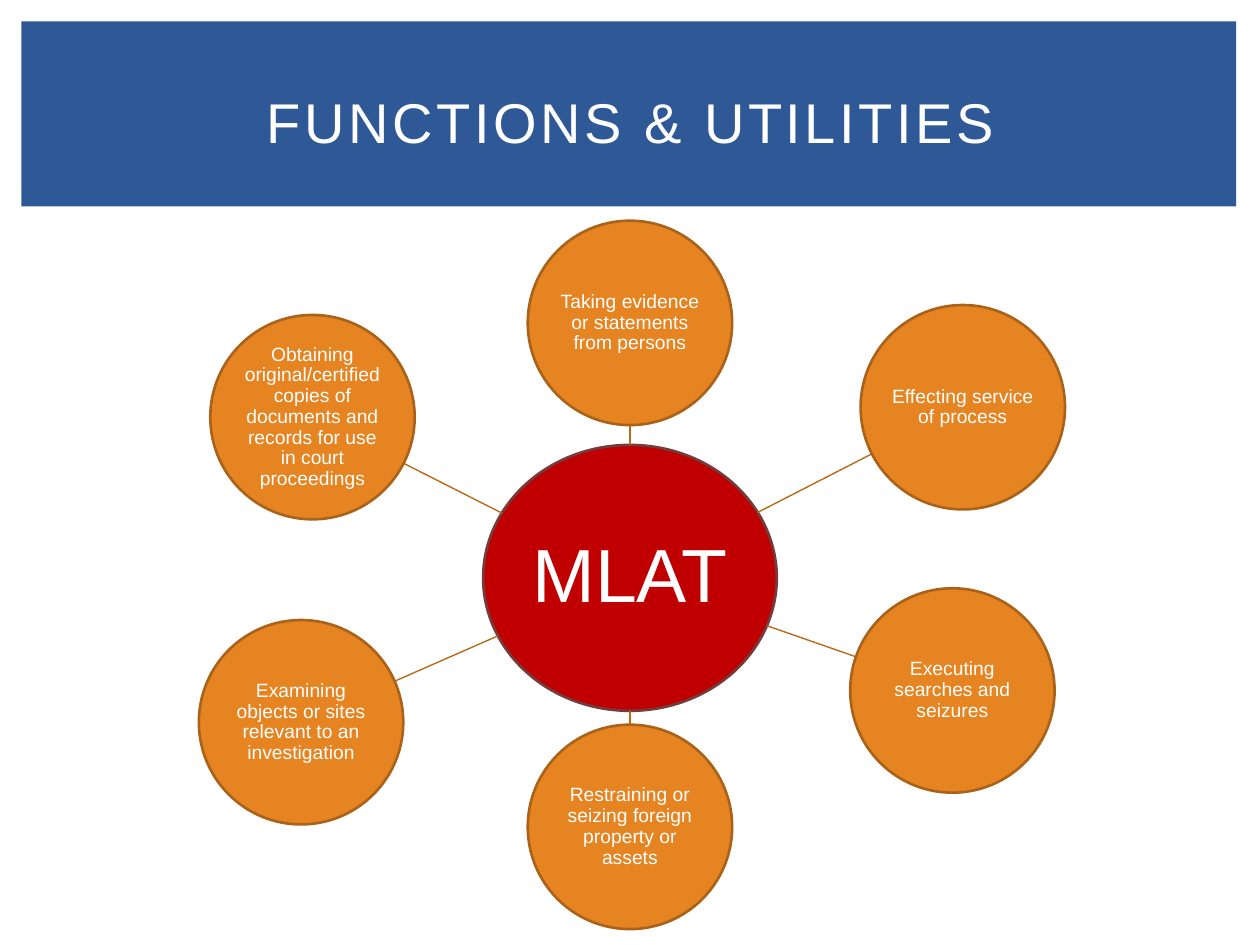
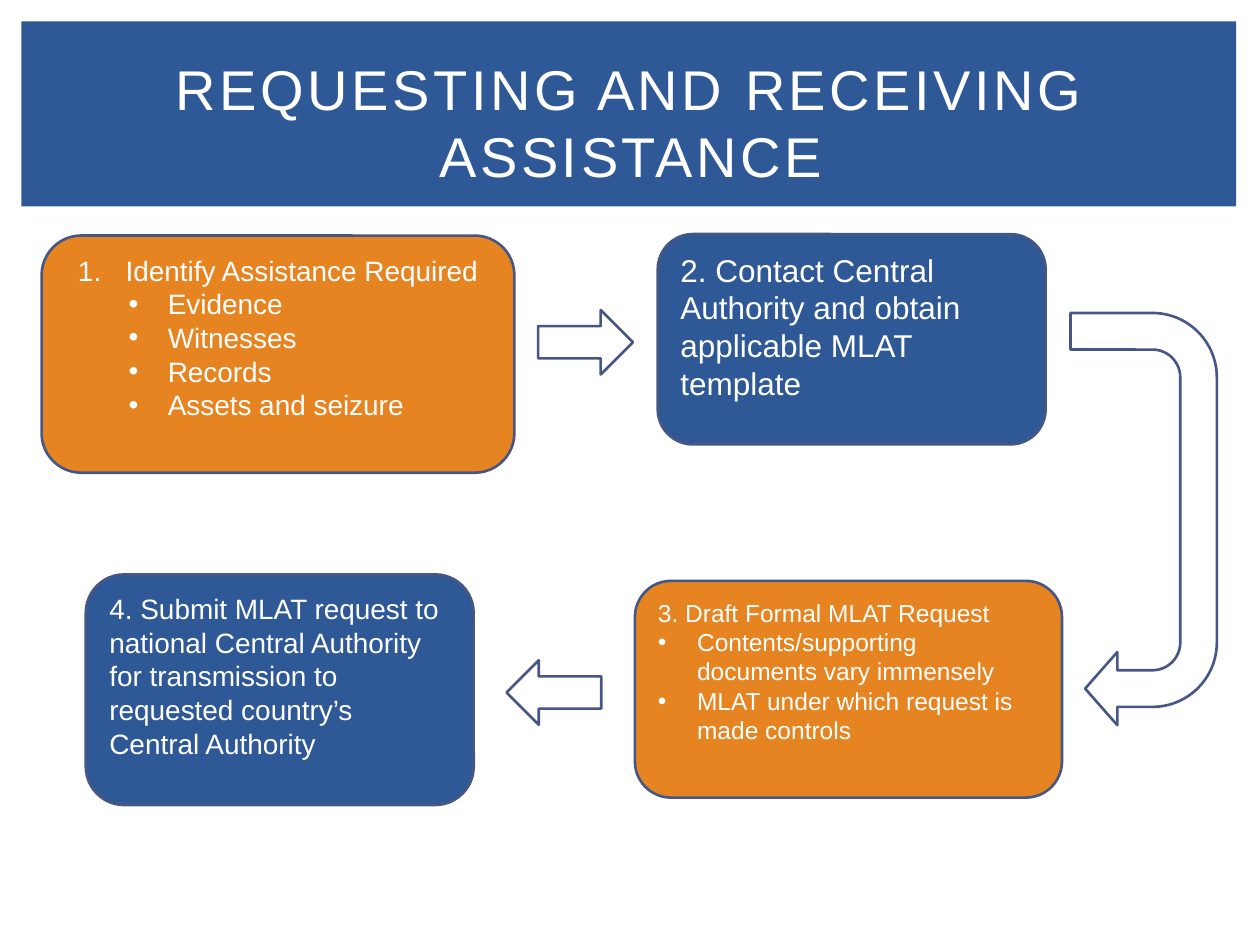
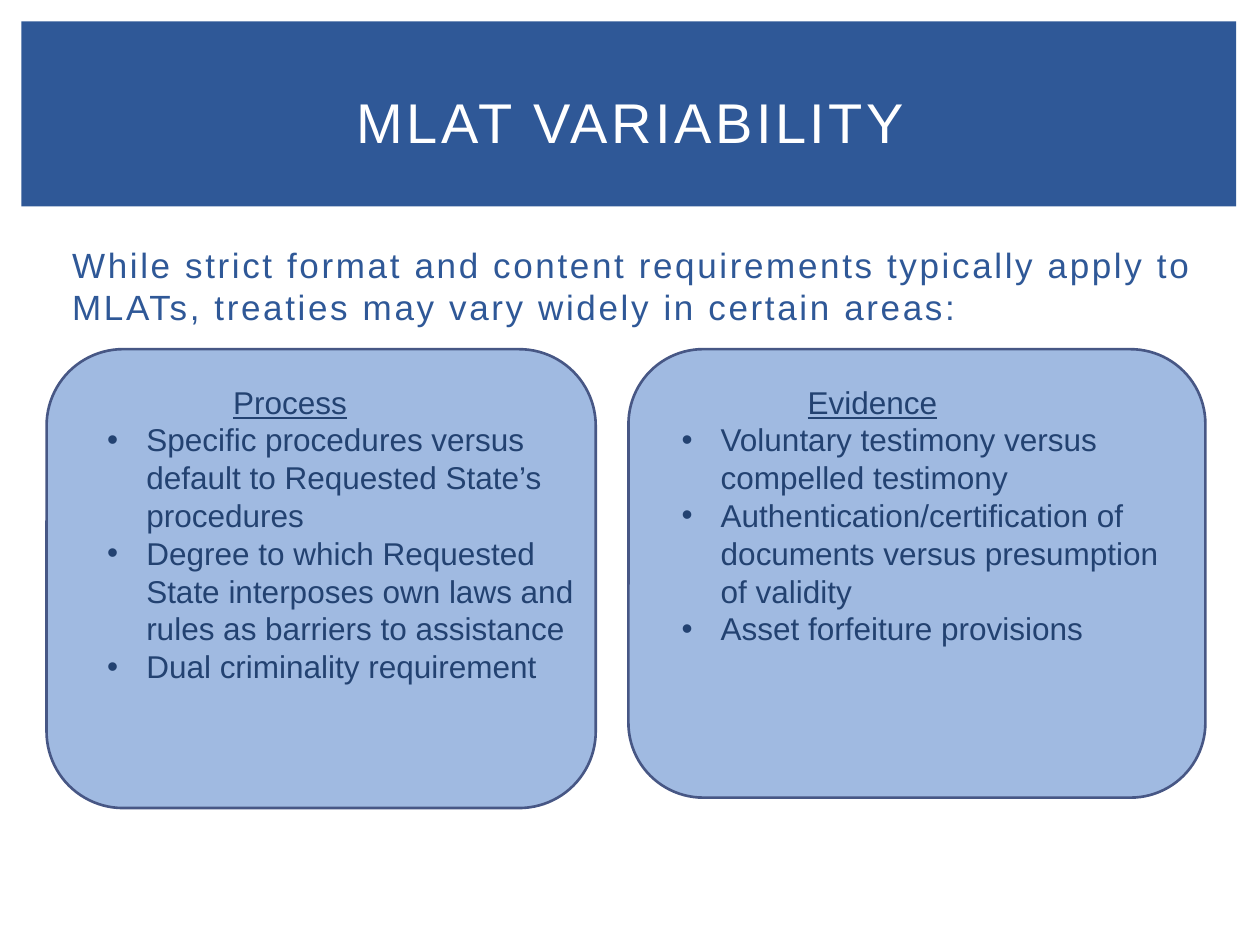
from math import hypot

from lxml.etree import SubElement
from pptx import Presentation
from pptx.dml.color import RGBColor
from pptx.enum.shapes import MSO_CONNECTOR, MSO_SHAPE
from pptx.enum.text import MSO_ANCHOR, MSO_AUTO_SIZE, PP_ALIGN
from pptx.oxml.ns import qn
from pptx.util import Cm, Pt

COLORS = {
    "blue": "2F5897", "orange": "E68422", "red": "C00000", "white": "FFFFFF",
    "pale": "A0BAE1", "navy": "234271", "outline": "475785",
    "hub_line": "733D3D", "spoke_line": "AA6219", "link": "B86A1B",
}
FONT = "Arial"
BAND = (0.43, 0.43, 24.49, 3.73)
TITLE_BOX = (1.07, 0.99, 23.29, 2.92)
TITLE_ONLY, TITLE_AND_BODY = 5, 1

# Paragraph formats: left and hang are in cm, spacing in points
CENTERED = {"alignment": PP_ALIGN.CENTER}
TITLE = {**CENTERED, "size": 32, "color": "white", "spacing": 2}
CIRCLE = {**CENTERED, "line_spacing": 0.9, "color": "white"}
NUMBERED = {**CENTERED, "left": 0.96, "hang": 0.96, "number": True}
BULLET = {"left": 0.79, "hang": 0.79, "bullet": "•"}
SUB_BULLET = {**BULLET, "left": 2.06, "level": 1}


def rgb(name):
    return RGBColor.from_string(COLORS[name])


def lengths(box):
    return [Cm(value) for value in box]


def place(shape, box):
    for name, value in zip(("left", "top", "width", "height"), lengths(box)):
        setattr(shape, name, value)


def within(box, offset_x, offset_y, width, height):
    return box[0] + offset_x, box[1] + offset_y, width, height


def write_paragraph(paragraph, text, style):
    # Indents and bullets come before all other settings
    properties = paragraph._p.get_or_add_pPr()
    left, hang = style.get("left", 0), style.get("hang", 0)
    properties.set("marL", str(Cm(left)))
    properties.set("indent", str(-Cm(hang)))
    if style.get("number"):
        SubElement(properties, qn("a:buFont"), typeface=FONT)
        SubElement(properties, qn("a:buAutoNum"), type="arabicPeriod")
    elif "bullet" in style:
        SubElement(properties, qn("a:buFont"), typeface=FONT)
        SubElement(properties, qn("a:buChar"), char=style["bullet"])
    else:
        SubElement(properties, qn("a:buNone"))
    settings = {"alignment": PP_ALIGN.LEFT, "space_before": Pt(0), "level": 0}
    settings["line_spacing"] = style.get("line_spacing", 1.0)
    settings.update((key, style[key]) for key in ("alignment", "level") if key in style)
    for name, value in settings.items():
        setattr(paragraph, name, value)

    run = paragraph.add_run()
    run.text = text
    font = {"name": FONT, "size": Pt(style["size"]),
            "bold": False, "underline": style.get("underline", False)}
    for name, value in font.items():
        setattr(run.font, name, value)
    run.font.color.rgb = rgb(style["color"])
    if "spacing" in style:
        run._r.get_or_add_rPr().set("spc", str(int(style["spacing"] * 100)))


def write(shape, paragraphs, base, anchor=MSO_ANCHOR.TOP, inset=None):
    frame = shape.text_frame
    settings = {"word_wrap": True, "auto_size": MSO_AUTO_SIZE.NONE,
                "vertical_anchor": anchor}
    if inset is not None:
        for side in ("left", "top", "right", "bottom"):
            settings[f"margin_{side}"] = Cm(inset)
    for name, value in settings.items():
        setattr(frame, name, value)
    for index, (text, style) in enumerate(paragraphs):
        paragraph = frame.add_paragraph() if index else frame.paragraphs[0]
        write_paragraph(paragraph, text, {**base, **style})


def add_shape(slide, kind, box, fill, line=None, rotation=0):
    shape = slide.shapes.add_shape(kind, *lengths(box))
    shape.shadow.inherit = False
    shape.rotation = rotation
    shape.fill.solid()
    shape.fill.fore_color.rgb = rgb(fill)
    if line:
        shape.line.color.rgb = rgb(line)
        shape.line.width = Pt(1.5)
    else:
        shape.line.fill.background()
    return shape


def add_band(presentation, slide):
    """Draw the title band and move it behind everything on the master."""
    band = add_shape(slide, MSO_SHAPE.RECTANGLE, BAND, "blue")
    band.element.nvSpPr.cNvPr.set("id", "20")
    presentation.slide_master.shapes.element.insert(2, band.element)


def add_slide(presentation, layout, title):
    slide = presentation.slides.add_slide(presentation.slide_layouts[layout])
    place(slide.shapes.title, TITLE_BOX)
    write(slide.shapes.title, [(title, {})], TITLE, MSO_ANCHOR.MIDDLE)
    return slide


def add_circle(slide, center, radii, text, size, fill, line, inset):
    (x, y), (radius_x, radius_y) = center, radii
    box = (x - radius_x, y - radius_y, 2 * radius_x, 2 * radius_y)
    circle = add_shape(slide, MSO_SHAPE.OVAL, box, fill, line)
    write(circle, [(text, {"size": size})], CIRCLE, MSO_ANCHOR.MIDDLE, inset)


def add_link(slide, start, end):
    link = slide.shapes.add_connector(MSO_CONNECTOR.STRAIGHT, *lengths(start + end))
    link.line.color.rgb = rgb("link")
    link.line.width = Pt(0.79)
    SubElement(link.element.spPr, qn("a:effectLst"))


def hub_diagram(slide, box, hub, spokes):
    """A hub in the middle of the box, linked to circles around it."""
    left, top, width, height = box
    x, y = left + width / 2, top + height / 2
    hub_x, hub_y, radius = 2.96, 2.68, 2.06
    add_circle(slide, (x, y), (hub_x, hub_y), hub, 43, "red", "hub_line", 0.08)
    for offset_x, offset_y, text in spokes:
        center = (x + offset_x, y + offset_y)
        # The link runs between the two outlines on the line of centres
        near = 1 / hypot(offset_x / hub_x, offset_y / hub_y)
        far = 1 - radius / hypot(offset_x, offset_y)
        start, end = [(x + offset_x * part, y + offset_y * part) for part in (near, far)]
        add_link(slide, start, end)
        add_circle(slide, center, (radius, radius), text, 11, "orange", "spoke_line", 0.03)


def step_flow(slide, box, steps, arrows):
    for offsets, fill, size, paragraphs in steps:
        step = add_shape(slide, MSO_SHAPE.ROUNDED_RECTANGLE, within(box, *offsets),
                         fill, "outline")
        write(step, paragraphs, {"size": size, "color": "white"})
    for kind, offsets, rotation, adjustments in arrows:
        arrow = add_shape(slide, kind, within(box, *offsets), "white", "outline", rotation)
        for index, value in enumerate(adjustments):
            arrow.adjustments[index] = value


def topic_card(slide, box, text_offsets, heading, heading_left, bullet_left, items):
    add_shape(slide, MSO_SHAPE.ROUNDED_RECTANGLE, box, "pale", "outline")
    text_box = slide.shapes.add_textbox(*lengths(within(box, *text_offsets)))
    paragraphs = [(heading, {"left": heading_left, "underline": True})]
    paragraphs += [(item, {**BULLET, "left": bullet_left}) for item in items]
    write(text_box, paragraphs, {"size": 18, "color": "navy"})


def functions_slide(presentation):
    slide = add_slide(presentation, TITLE_ONLY, "FUNCTIONS & UTILITIES")
    add_band(presentation, slide)
    hub_diagram(slide, (3.9, 4.4, 17.6, 14.5), "MLAT", [
        (0, -5.14, "Taking evidence or statements from persons"),
        (6.71, -3.44, "Effecting service of process"),
        (6.5, 2.27, "Executing searches and seizures"),
        (0, 5.02, "Restraining or seizing foreign property or assets"),
        (-6.63, 2.91, "Examining objects or sites relevant to an investigation"),
        (-6.4, -3.24, "Obtaining original/certified copies of documents and "
                      "records for use in court proceedings"),
    ])


def assistance_slide(presentation):
    slide = add_slide(presentation, TITLE_ONLY, "REQUESTING AND RECEIVING ASSISTANCE")
    needs = ["Evidence", "Witnesses", "Records", "Assets and seizure"]
    contents = ["Contents/supporting documents vary immensely",
                "MLAT under which request is made controls"]
    steps = [
        ((0.04, 0.05, 9.53, 4.78), "orange", 16,
         [("Identify Assistance Required", NUMBERED)]
         + [(need, SUB_BULLET) for need in needs]),
        ((12.46, 0.02, 7.82, 4.24), "blue", 18,
         [("2. Contact Central Authority and obtain applicable MLAT template", {})]),
        ((12, 7.01, 8.61, 4.37), "orange", 14,
         [("3. Draft Formal MLAT Request", {})]
         + [(content, BULLET) for content in contents]),
        ((0.93, 6.88, 7.82, 4.65), "blue", 16,
         [("4. Submit MLAT request to national Central Authority for "
           "transmission to requested country’s Central Authority", {})]),
    ]
    arrows = [
        (MSO_SHAPE.RIGHT_ARROW, (10.05, 1.55, 1.91, 1.3), 0, []),
        (MSO_SHAPE.U_TURN_ARROW, (18.1, 4.29, 8.31, 2.95), 90,
         [0.25, 0.25, 0.22, 0.44, 0.9]),
        (MSO_SHAPE.RIGHT_ARROW, (9.41, 8.61, 1.91, 1.3), 180, []),
    ]
    step_flow(slide, (0.8, 4.7), steps, arrows)


def variability_slide(presentation):
    slide = add_slide(presentation, TITLE_AND_BODY, "MLAT VARIABILITY")
    body = slide.placeholders[1]
    place(body, (1.07, 4.78, 23.34, 12.24))
    write(body, [("While strict format and content requirements typically apply to "
                  "MLATs, treaties may vary widely in certain areas:", {"left": 0.13})],
          {"size": 20, "color": "blue", "spacing": 1.5})
    topic_card(slide, (0.94, 7.04, 11.07, 9.25), (0.97, 0.55, 9.96, 7.19),
               "Process", 2.54, 0.79, [
        "Specific procedures versus default to Requested State’s procedures",
        "Degree to which Requested State interposes own laws and rules as "
        "barriers to assistance",
        "Dual criminality requirement",
    ])
    topic_card(slide, (12.67, 7.04, 11.63, 9.04), (0.69, 0.55, 10.31, 5.64),
               "Evidence", 2.67, 0.92, [
        "Voluntary testimony versus compelled testimony",
        "Authentication/certification of documents versus presumption of validity",
        "Asset forfeiture provisions",
    ])


def main():
    presentation = Presentation()
    presentation.slide_width, presentation.slide_height = Cm(25.4), Cm(19.05)
    functions_slide(presentation)
    assistance_slide(presentation)
    variability_slide(presentation)
    presentation.save("out.pptx")


if __name__ == "__main__":
    main()
